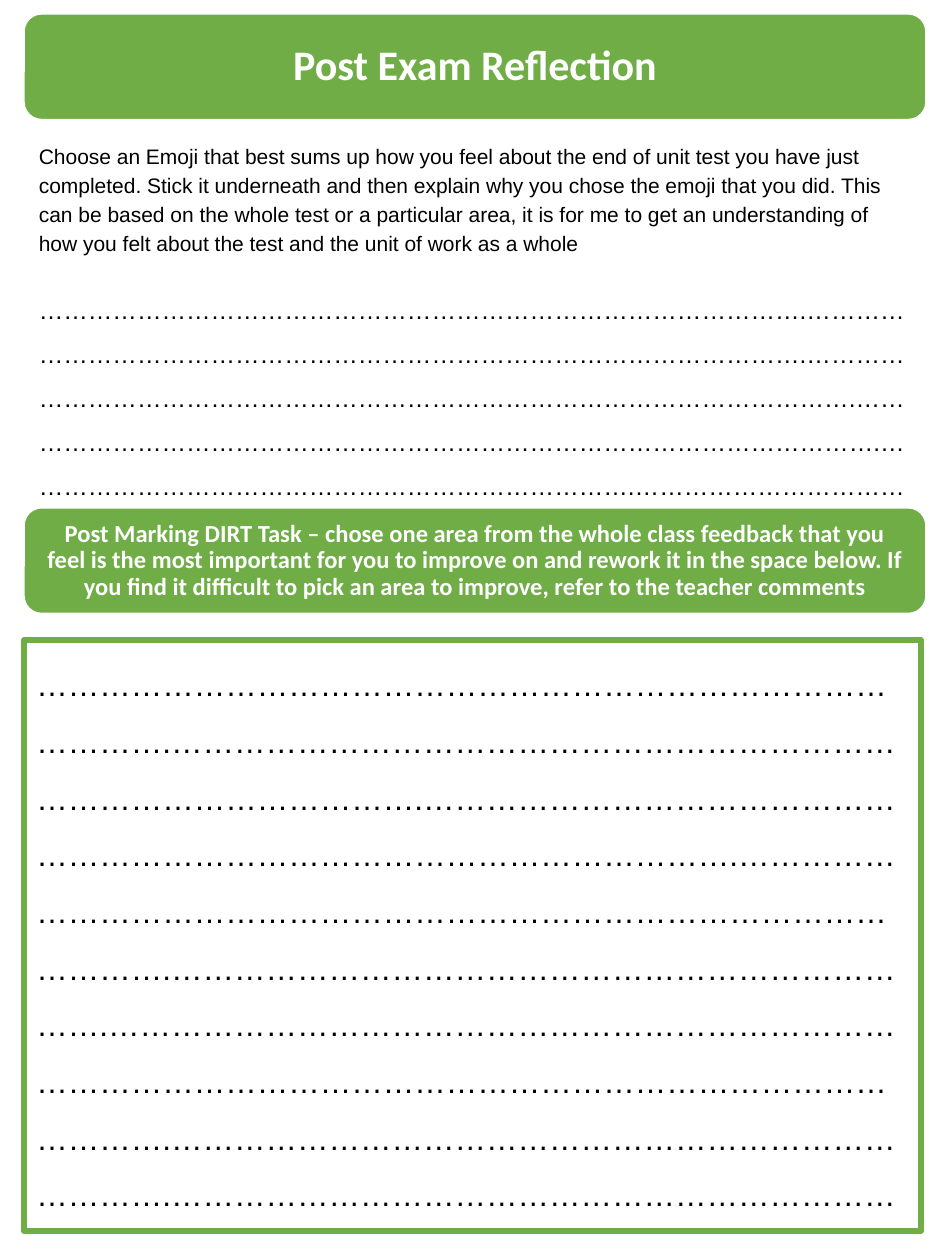
from pptx import Presentation
from pptx.dml.color import RGBColor
from pptx.enum import shapes, text
from pptx.util import Inches, Pt

THEME = {
    "green": RGBColor.from_string("70AD47"),
    "white": RGBColor.from_string("FFFFFF"),
    "black": RGBColor.from_string("000000"),
    "heading_font": "Calibri", "body_font": "Arial",
    "title": 24, "task": 14, "prompt": 12, "answer": 14, "rework": 18,
}

TITLE = "Post Exam Reflection"
PROMPT = (
    "Choose an Emoji that best sums up how you feel about the end of unit test you "
    "have just completed. Stick it underneath and then explain why you chose the "
    "emoji that you did. This can be based on the whole test or a particular area, "
    "it is for me to get an understanding of how you felt about the test and the "
    "unit of work as a whole"
)
TASK = (
    "Post Marking DIRT Task – chose one area from the whole class feedback that you "
    "feel is the most important for you to improve on and rework it in the space "
    "below. If you find it difficult to pick an area to improve, refer to the "
    "teacher comments"
)
DOTTED_LINES = (
    "………………………………………………………………………………….",
    "…………………………………………………………………………………………….",
    "………………………………………………………………………………………………….",
    "……………………………………………………………………………………………….",
    "………………………………………………………………….",
)
ANSWER_END = "……………………………"
REWORK_END = (
    "…………………………………………………………………………………………………………………………………………………….",
    "……………………………………………………………………….",
    "……………………………………………………………",
)
ANSWER_DOTS = "".join(DOTTED_LINES) + ANSWER_END
REWORK_DOTS = "".join(DOTTED_LINES + REWORK_END)

BAND_LEFT, BAND_WIDTH, BAND_HEIGHT = 0.19, 7.16, 0.84
TITLE_TOP, TASK_TOP = 0.11, 4.03
BAND_PADDING = 0.04
PROMPT_BOX = (0.21, 1.06, 7.12, 3.03)
REWORK_BOX = (0.19, 5.08, 7.12, 4.69)


def inches(box):
    return [Inches(length) for length in box]


def style(paragraph, size, font, color, spacing, align, bold=False):
    paragraph.line_spacing = spacing
    paragraph.alignment = align
    for run in paragraph.runs:
        run.font.size = Pt(size)
        run.font.name = font
        run.font.bold = bold
        run.font.color.rgb = color


def style_body(paragraph, size, spacing):
    style(paragraph, size, THEME["body_font"], THEME["black"], spacing,
          text.PP_ALIGN.LEFT)


def add_panel(slide, preset, box, fill, line, line_width):
    panel = slide.shapes.add_shape(preset, *inches(box))
    panel.shadow.inherit = False
    panel.fill.solid()
    panel.fill.fore_color.rgb = fill
    panel.line.color.rgb = line
    panel.line.width = Pt(line_width)
    return panel


def add_band(slide, top):
    add_panel(slide, shapes.MSO_SHAPE.ROUNDED_RECTANGLE,
              (BAND_LEFT, top, BAND_WIDTH, BAND_HEIGHT),
              THEME["green"], THEME["white"], 1)


def fill_heading(heading, top, words, size):
    """Place a heading inside the band that starts at top."""
    heading.left, heading.top, heading.width, heading.height = inches((
        BAND_LEFT + BAND_PADDING, top + BAND_PADDING,
        BAND_WIDTH - 2 * BAND_PADDING, BAND_HEIGHT - 2 * BAND_PADDING))
    frame = heading.text_frame
    frame.text = words
    frame.word_wrap = True
    frame.auto_size = text.MSO_AUTO_SIZE.NONE
    frame.vertical_anchor = text.MSO_ANCHOR.MIDDLE
    frame.margin_left = frame.margin_right = Inches(0.13)
    frame.margin_top = frame.margin_bottom = Inches(0.13)
    style(frame.paragraphs[0], size, THEME["heading_font"], THEME["white"], 0.9,
          text.PP_ALIGN.CENTER, bold=True)


def add_prompt(slide):
    frame = slide.shapes.add_textbox(*inches(PROMPT_BOX)).text_frame
    frame.word_wrap = True
    frame.auto_size = text.MSO_AUTO_SIZE.SHAPE_TO_FIT_TEXT
    prompt, answer = frame.paragraphs[0], frame.add_paragraph()
    prompt.text, answer.text = PROMPT, ANSWER_DOTS
    style_body(prompt, THEME["prompt"], 1.15)
    style_body(answer, THEME["answer"], 1.5)
    prompt.space_after = Pt(14)


def add_rework_space(slide):
    frame = add_panel(slide, shapes.MSO_SHAPE.RECTANGLE, REWORK_BOX,
                      THEME["white"], THEME["green"], 3).text_frame
    frame.text = REWORK_DOTS
    frame.word_wrap = True
    frame.vertical_anchor = text.MSO_ANCHOR.TOP
    style_body(frame.paragraphs[0], THEME["rework"], 1.5)


def main():
    deck = Presentation()
    deck.slide_width, deck.slide_height = Inches(7.5), Inches(10)
    slide = deck.slides.add_slide(deck.slide_layouts[5])

    add_band(slide, TITLE_TOP)
    title = slide.shapes.title
    fill_heading(title, TITLE_TOP, TITLE, THEME["title"])
    title.element.getparent().append(title.element)  # bring in front of its band

    add_prompt(slide)
    add_band(slide, TASK_TOP)
    task = slide.shapes.add_textbox(0, 0, 0, 0)
    fill_heading(task, TASK_TOP, TASK, THEME["task"])
    add_rework_space(slide)

    deck.save("out.pptx")


if __name__ == "__main__":
    main()
